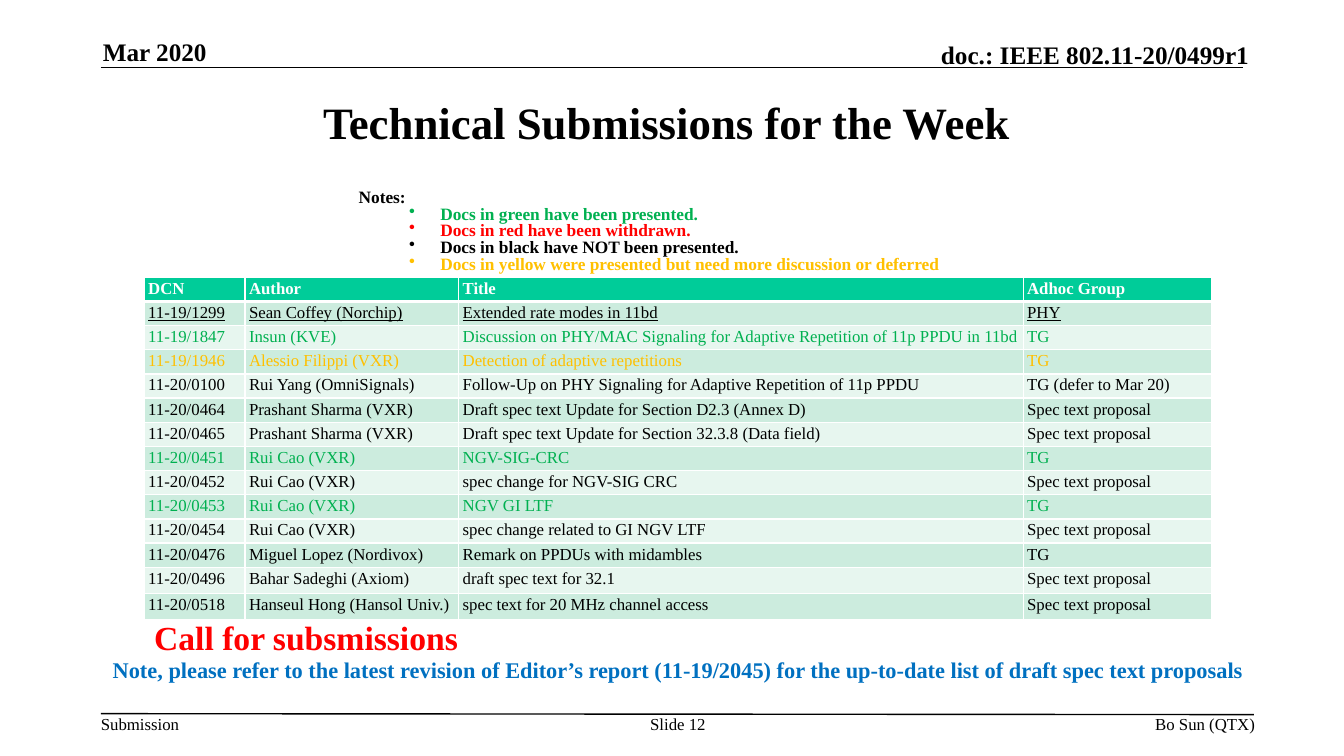
from dataclasses import dataclass
from typing import Any

from lxml import etree
from pptx import Presentation
from pptx.dml.color import RGBColor
from pptx.enum.shapes import MSO_CONNECTOR
from pptx.enum.text import MSO_ANCHOR, MSO_AUTO_SIZE, PP_ALIGN
from pptx.oxml.ns import qn
from pptx.util import Emu, Inches, Pt

LEFT, MID, RIGHT = PP_ALIGN.LEFT, PP_ALIGN.CENTER, PP_ALIGN.RIGHT
TOP, CENTER, BOTTOM = MSO_ANCHOR.TOP, MSO_ANCHOR.MIDDLE, MSO_ANCHOR.BOTTOM
FIXED = MSO_AUTO_SIZE.NONE
STRAIGHT = MSO_CONNECTOR.STRAIGHT

FONT = "Times New Roman"
BLACK, WHITE, RED, BLUE = "000000", "FFFFFF", "FF0000", "0070C0"
GREEN, YELLOW = "00B050", "FFC000"
HEAD, BANDS = "00CC99", ("CCECDE", "E7F6EF")
WIDE, HIGH = Inches(13.33), Inches(7.5)


@dataclass
class Label:
    """A text box; its place is in percent of the slide."""
    text: str
    box: tuple[float, float, float, float]
    size: float = 12
    color: str = BLACK
    bold: bool = False
    align: Any = LEFT
    anchor: Any = TOP
    inset: float = 0
    wrap: bool = True


@dataclass
class Paper:
    """A table row."""
    cells: tuple[str, str, str, str]
    color: str = BLACK
    under: bool = False


LABELS = [
    Label("Submission", (7.5, 94.4, 5.85, 2.67), wrap=False),
    Label("doc.: IEEE 802.11-20/0499r1", (54.68, 5.2, 38.25, 4), 18,
          bold=True, align=RIGHT, anchor=BOTTOM),
    Label("Mar 2020", (7.65, 4.8, 20.48, 4), 18, bold=True, anchor=BOTTOM),
    Label("Bo Sun (QTX)", (58.58, 94.4, 34.8, 2.67), align=RIGHT),
    Label("Slide 12", (47.55, 94.4, 5.78, 5.33), align=MID),
    Label("Note, please refer to the latest revision of Editor’s report "
          "(11-19/2045) for the up-to-date list of draft spec text proposals",
          (7.65, 86.13, 87.08, 4.93), 16, BLUE, True, inset=0.1),
    Label("Call for subsmissions", (10.73, 80.93, 76.28, 6.67), 24, RED, True,
          inset=0.1),
]
RULES = [(7.5, 8.93, 92.48, 8.93), (7.5, 94.4, 93.3, 94.53)]
NOTES = [
    ("Docs in green have been presented.", GREEN),
    ("Docs in red have been withdrawn.", RED),
    ("Docs in black have NOT been presented.", BLACK),
    ("Docs in yellow were presented but need more discussion or deferred",
     YELLOW),
]
SPEC = "Spec text proposal"
PAPERS = [
    Paper(("DCN", "Author", "Title", "Adhoc Group"), WHITE),
    Paper(("11-19/1299", "Sean Coffey (Norchip)",
           "Extended rate modes in 11bd", "PHY"), under=True),
    Paper(("11-19/1847", "Insun (KVE)",
           "Discussion on PHY/MAC Signaling for Adaptive Repetition of "
           "11p PPDU in 11bd", "TG"), GREEN),
    Paper(("11-19/1946", "Alessio Filippi (VXR)",
           "Detection of adaptive repetitions", "TG"), YELLOW),
    Paper(("11-20/0100", "Rui Yang (OmniSignals)",
           "Follow-Up on PHY Signaling for Adaptive Repetition of 11p PPDU",
           "TG (defer to Mar 20)")),
    Paper(("11-20/0464", "Prashant Sharma (VXR)",
           "Draft spec text Update for Section D2.3 (Annex D)", SPEC)),
    Paper(("11-20/0465", "Prashant Sharma (VXR)",
           "Draft spec text Update for Section 32.3.8 (Data field)", SPEC)),
    Paper(("11-20/0451", "Rui Cao (VXR)", "NGV-SIG-CRC", "TG"), GREEN),
    Paper(("11-20/0452", "Rui Cao (VXR)", "spec change for NGV-SIG CRC",
           SPEC)),
    Paper(("11-20/0453", "Rui Cao (VXR)", "NGV GI LTF", "TG"), GREEN),
    Paper(("11-20/0454", "Rui Cao (VXR)", "spec change related to GI NGV LTF",
           SPEC)),
    Paper(("11-20/0476", "Miguel Lopez (Nordivox)",
           "Remark on PPDUs with midambles", "TG")),
    Paper(("11-20/0496", "Bahar Sadeghi (Axiom)", "draft spec text for 32.1",
           SPEC)),
    Paper(("11-20/0518", "Hanseul Hong (Hansol Univ.)",
           "spec text for 20 MHz channel access", SPEC)),
]
COLS = (7.5, 15.9, 42, 14.03)
ROWS = [3.2] * 12 + [3.47] * 2


def rgb(code: str) -> RGBColor:
    return RGBColor.from_string(code)


def across(share: float) -> Emu:
    return Emu(round(WIDE * share / 100))


def down(share: float) -> Emu:
    return Emu(round(HIGH * share / 100))


def place(box: tuple) -> tuple:
    return across(box[0]), down(box[1]), across(box[2]), down(box[3])


def write(para: Any, text: str, *, size: float = 12, color: str = BLACK,
          bold: bool = False, under: bool = False, align: Any = LEFT) -> None:
    para.alignment = align
    run = para.add_run()
    run.text = text
    font = run.font
    font.name, font.size = FONT, Pt(size)
    font.bold, font.underline = bold, under
    font.color.rgb = rgb(color)


def add_label(slide: Any, item: Label) -> None:
    frame = slide.shapes.add_textbox(*place(item.box)).text_frame
    frame.word_wrap, frame.vertical_anchor = item.wrap, item.anchor
    frame.margin_left = frame.margin_right = Inches(item.inset)
    frame.margin_top = frame.margin_bottom = Inches(item.inset / 2)
    write(frame.paragraphs[0], item.text, size=item.size, color=item.color,
          bold=item.bold, align=item.align)


def add_rule(slide: Any, ends: tuple) -> None:
    line = slide.shapes.add_connector(STRAIGHT, *place(ends))
    line.line.color.rgb, line.line.width = rgb(BLACK), Pt(1)
    etree.SubElement(line._element.spPr, qn("a:effectLst"))


def add_title(slide: Any) -> None:
    title = slide.shapes.title
    title.left, title.top, title.width, title.height = place(
        (18.15, 8.93, 63.75, 14.4))
    frame = title.text_frame
    frame.auto_size, frame.vertical_anchor = FIXED, CENTER
    write(frame.paragraphs[0], "Technical Submissions for the Week ", size=32,
          bold=True, align=MID)


def add_notes(slide: Any) -> None:
    frame = slide.shapes.add_textbox(
        *place((25.95, 24.53, 48.15, 13.33))).text_frame
    frame.word_wrap = True
    head = frame.paragraphs[0]
    head.line_spacing = 0.8
    write(head, "Notes:", size=12.4, bold=True)
    for text, color in NOTES:
        para = frame.add_paragraph()
        para.level, para.line_spacing = 1, 0.8
        write(para, text, size=12.4, color=color, bold=True)
        props = para._p.get_or_add_pPr()
        props.set("marL", str(Inches(0.81)))
        props.set("indent", str(Inches(-0.31)))
        etree.SubElement(props, qn("a:buChar"), char="•")


def edge(cell: Any, side: str, width: float) -> None:
    props = cell._tc.get_or_add_tcPr()
    line = etree.SubElement(props, qn(f"a:ln{side}"), w=str(Pt(width)))
    fill = etree.SubElement(line, qn("a:solidFill"))
    etree.SubElement(fill, qn("a:srgbClr"), val=WHITE)


def add_papers(slide: Any) -> None:
    box = (10.73, 36.67, sum(COLS), sum(ROWS))
    table = slide.shapes.add_table(len(ROWS), len(COLS), *place(box)).table
    for col, share in zip(table.columns, COLS):
        col.width = across(share)
    for i, (paper, share) in enumerate(zip(PAPERS, ROWS)):
        table.rows[i].height = down(share)
        for cell, text in zip(table.rows[i].cells, paper.cells):
            cell.margin_left = cell.margin_right = Inches(0.04)
            cell.margin_top = cell.margin_bottom = Inches(0.02)
            # The edge under the header is thicker
            widths = {"L": 1, "R": 1, "T": 3 if i == 1 else 1,
                      "B": 3 if i == 0 else 1}
            for side, width in widths.items():
                edge(cell, side, width)
            cell.fill.solid()
            cell.fill.fore_color.rgb = rgb(BANDS[(i - 1) % 2] if i else HEAD)
            write(cell.text_frame.paragraphs[0], text, color=paper.color,
                  bold=i == 0, under=paper.under)


def main() -> None:
    deck = Presentation()
    deck.slide_width, deck.slide_height = WIDE, HIGH
    slide = deck.slides.add_slide(deck.slide_layouts[5])
    # Frame of the page
    for ends in RULES:
        add_rule(slide, ends)
    # Content
    add_title(slide)
    add_notes(slide)
    add_papers(slide)
    for item in LABELS:
        add_label(slide, item)
    deck.save("out.pptx")


if __name__ == "__main__":
    main()
